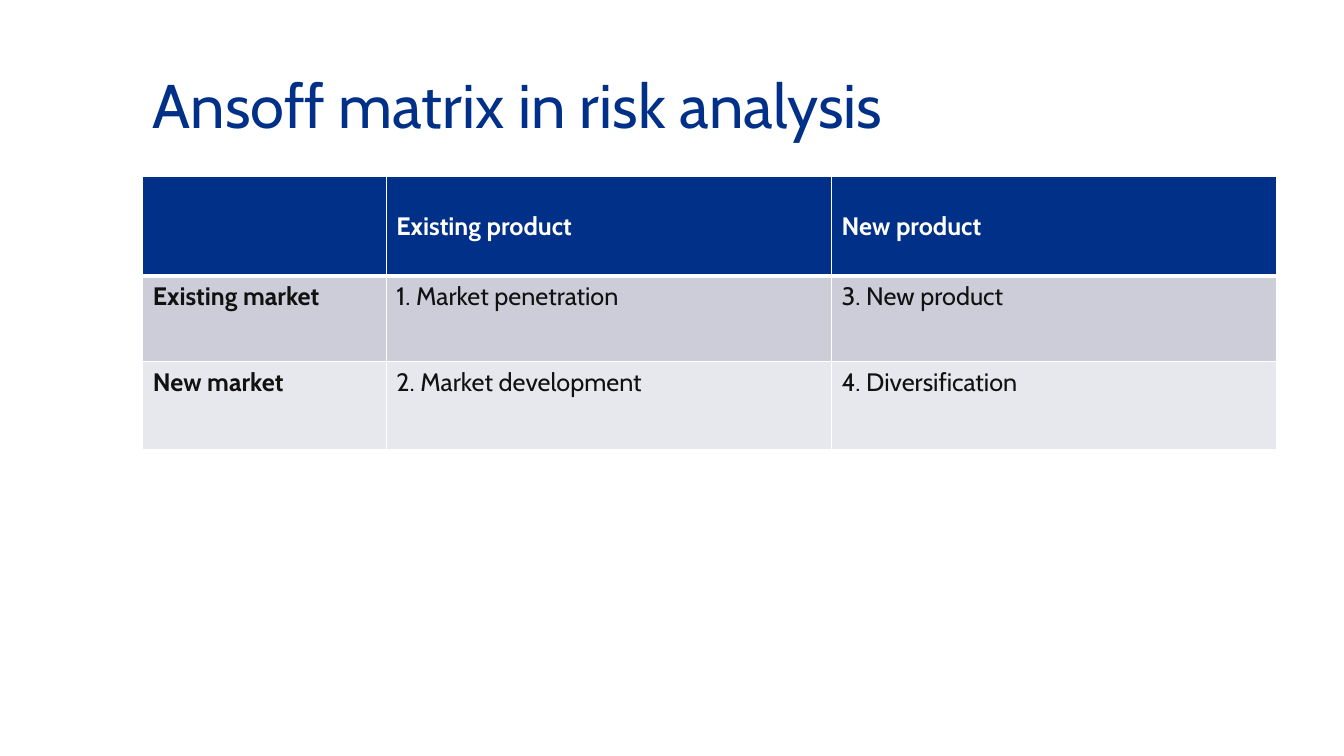
import pptx
import pptx.util
import pptx.dml.color
import pptx.enum.text
import pptx.oxml.ns
import lxml.etree

Pt = pptx.util.Pt
ANCHOR = pptx.enum.text.MSO_ANCHOR


def rgb(value):
    return pptx.dml.color.RGBColor.from_string(value)


class Deck:
    font = "Cabin"
    navy = "003087"
    ink = "111111"
    white = "FFFFFF"
    bands = ("CCCDD9", "E7E8ED")

    def __init__(self, prs):
        self.s = prs.slides.add_slide(prs.slide_layouts[6])

    def style(self, p, size, color, bold=False):
        f = p.font
        f.name, f.size, f.bold = self.font, Pt(size), bold
        f.color.rgb = rgb(color)

    def title(self, text, x, y, w, h):
        tf = self.s.shapes.add_textbox(Pt(x), Pt(y), Pt(w), Pt(h)).text_frame
        tf.word_wrap = True
        tf.vertical_anchor = ANCHOR.MIDDLE
        p = tf.paragraphs[0]
        p.text = text
        self.style(p, 44, self.navy)

    def border(self, cell, side, width):
        qn = pptx.oxml.ns.qn
        tcPr = cell._tc.get_or_add_tcPr()
        ln = lxml.etree.SubElement(tcPr, qn(f"a:ln{side}"), w=str(Pt(width)))
        fill = lxml.etree.SubElement(ln, qn("a:solidFill"))
        lxml.etree.SubElement(fill, qn("a:srgbClr"), val=self.white)

    def cell(self, cell, text, row, col):
        header = row == 0
        for side in "LRTB":
            thick = (row, side) in ((0, "B"), (1, "T"))
            self.border(cell, side, 3 if thick else 1)
        cell.fill.solid()
        cell.fill.fore_color.rgb = rgb(self.navy if header else self.bands[(row - 1) % 2])
        cell.vertical_anchor = ANCHOR.MIDDLE if header else ANCHOR.TOP
        p = cell.text_frame.paragraphs[0]
        p.text = text
        self.style(p, 18, self.white if header else self.ink, header or col == 0)

    def table(self, rows, x, y, widths, heights):
        frame = self.s.shapes.add_table(len(rows), len(widths), Pt(x), Pt(y),
                                        Pt(sum(widths)), Pt(sum(heights)))
        table = frame.table
        for column, width in zip(table.columns, widths):
            column.width = Pt(width)
        for i, (texts, height) in enumerate(zip(rows, heights)):
            table.rows[i].height = Pt(height)
            for j, text in enumerate(texts):
                self.cell(table.cell(i, j), text, i, j)


def main():
    prs = pptx.Presentation()
    prs.slide_width, prs.slide_height = Pt(960), Pt(540)
    deck = Deck(prs)
    deck.title("Ansoff matrix in risk analysis", 102, 37.5, 810, 74)
    deck.table(
        [
            ("", "Existing product", "New product"),
            ("Existing market", "1. Market penetration", "3. New product"),
            ("New market", "2. Market development", "4. Diversification"),
        ],
        102, 126, (174, 318, 318), (71, 61.5, 62.5),
    )
    prs.save("out.pptx")


if __name__ == "__main__":
    main()
